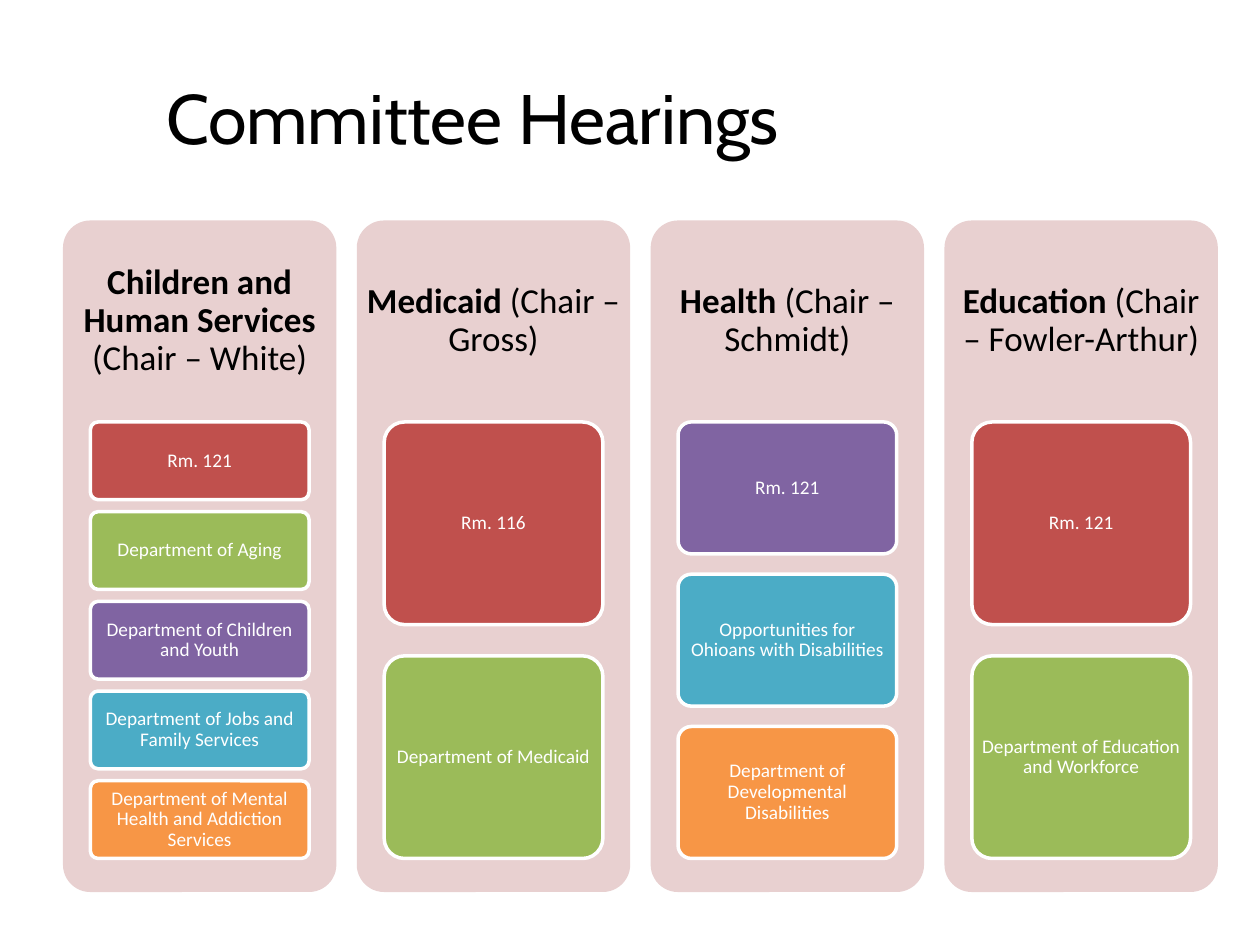
from pptx import Presentation
from pptx.dml.color import RGBColor
from pptx.enum.shapes import MSO_SHAPE
from pptx.enum.text import MSO_ANCHOR, PP_ALIGN
from pptx.util import Inches, Pt

ROUNDED = MSO_SHAPE.ROUNDED_RECTANGLE
MIDDLE = MSO_ANCHOR.MIDDLE
CENTER = PP_ALIGN.CENTER

BLACK = RGBColor(0x00, 0x00, 0x00)
WHITE = RGBColor(0xFF, 0xFF, 0xFF)
PINK = RGBColor(0xE8, 0xD0, 0xD0)
RED = RGBColor(0xC0, 0x50, 0x4D)
GREEN = RGBColor(0x9B, 0xBB, 0x59)
PURPLE = RGBColor(0x80, 0x64, 0xA2)
BLUE = RGBColor(0x4B, 0xAC, 0xC6)
ORANGE = RGBColor(0xF7, 0x96, 0x46)

# Column grid, in inches
LEFT, TOP = 0.5, 1.75
COLUMN_WIDTH, COLUMN_HEIGHT = 2.17, 5.33
COLUMN_PITCH = 2.332
HEADING_SHARE = 0.3     # of the column height
CARDS_SHARE = 0.65      # of the column height
CARD_WIDTH_SHARE = 0.8  # of the column width
GAP_SHARE = 0.154       # of a card's height

# Committee, chair, then the cards from top to bottom
COMMITTEES = [
    ("Children and Human Services", "White", [
        ("Rm. 121", RED),
        ("Department of Aging", GREEN),
        ("Department of Children and Youth", PURPLE),
        ("Department of Jobs and Family Services", BLUE),
        ("Department of Mental Health and Addiction Services", ORANGE),
    ]),
    ("Medicaid", "Gross", [
        ("Rm. 116", RED),
        ("Department of Medicaid", GREEN),
    ]),
    ("Health", "Schmidt", [
        ("Rm. 121", PURPLE),
        ("Opportunities for Ohioans with Disabilities", BLUE),
        ("Department of Developmental Disabilities", ORANGE),
    ]),
    ("Education", "Fowler-Arthur", [
        ("Rm. 121", RED),
        ("Department of Education and Workforce", GREEN),
    ]),
]


def add_title(slide, text):
    title = slide.shapes.title
    title.left, title.top = Inches(0.5), Inches(0.3)
    title.width, title.height = Inches(6.5), Inches(1.25)
    title.text_frame.vertical_anchor = MIDDLE
    paragraph = title.text_frame.paragraphs[0]
    paragraph.text = text
    paragraph.alignment = CENTER
    paragraph.font.name = "Cabin"
    paragraph.font.size = Pt(40)
    paragraph.font.color.rgb = BLACK


def add_rounded_box(slide, left, top, width, height, color):
    box = slide.shapes.add_shape(
        ROUNDED, Inches(left), Inches(top), Inches(width), Inches(height))
    box.adjustments[0] = 0.1
    box.shadow.inherit = False
    box.fill.solid()
    box.fill.fore_color.rgb = color
    box.line.fill.background()
    return box


def format_label(frame, size, color, side_inset, end_inset):
    """Centre the label in its frame and return its paragraph."""
    frame.word_wrap = True
    frame.vertical_anchor = MIDDLE
    frame.margin_left = frame.margin_right = Inches(side_inset)
    frame.margin_top = frame.margin_bottom = Inches(end_inset)
    paragraph = frame.paragraphs[0]
    paragraph.alignment = CENTER
    paragraph.line_spacing = 0.9
    paragraph.font.name = "Calibri"
    paragraph.font.size = Pt(size)
    paragraph.font.color.rgb = color
    return paragraph


def add_heading(slide, left, committee, chair):
    heading = slide.shapes.add_textbox(
        Inches(left), Inches(TOP), Inches(COLUMN_WIDTH),
        Inches(COLUMN_HEIGHT * HEADING_SHARE))
    paragraph = format_label(heading.text_frame, 20, BLACK, 0.08, 0.08)
    name = paragraph.add_run()
    name.text = committee
    name.font.bold = True
    paragraph.add_run().text = f" (Chair – {chair})"


def add_cards(slide, column_left, cards):
    width = COLUMN_WIDTH * CARD_WIDTH_SHARE
    left = column_left + (COLUMN_WIDTH - width) / 2
    first_top = TOP + COLUMN_HEIGHT * HEADING_SHARE
    count = len(cards)
    height = COLUMN_HEIGHT * CARDS_SHARE / (count + (count - 1) * GAP_SHARE)
    for row, (label, color) in enumerate(cards):
        top = first_top + row * height * (1 + GAP_SHARE)
        card = add_rounded_box(slide, left, top, width, height, color)
        card.line.color.rgb = WHITE
        card.line.width = Pt(2)
        format_label(card.text_frame, 11, WHITE, 0.03, 0.02).text = label


def main():
    presentation = Presentation()
    presentation.slide_width, presentation.slide_height = Inches(10), Inches(7.5)
    slide = presentation.slides.add_slide(presentation.slide_layouts[5])
    add_title(slide, "Committee Hearings")

    # One column for each committee
    for index, (committee, chair, cards) in enumerate(COMMITTEES):
        left = LEFT + index * COLUMN_PITCH
        add_rounded_box(slide, left, TOP, COLUMN_WIDTH, COLUMN_HEIGHT, PINK)
        add_heading(slide, left, committee, chair)
        add_cards(slide, left, cards)

    presentation.save("out.pptx")


if __name__ == "__main__":
    main()
